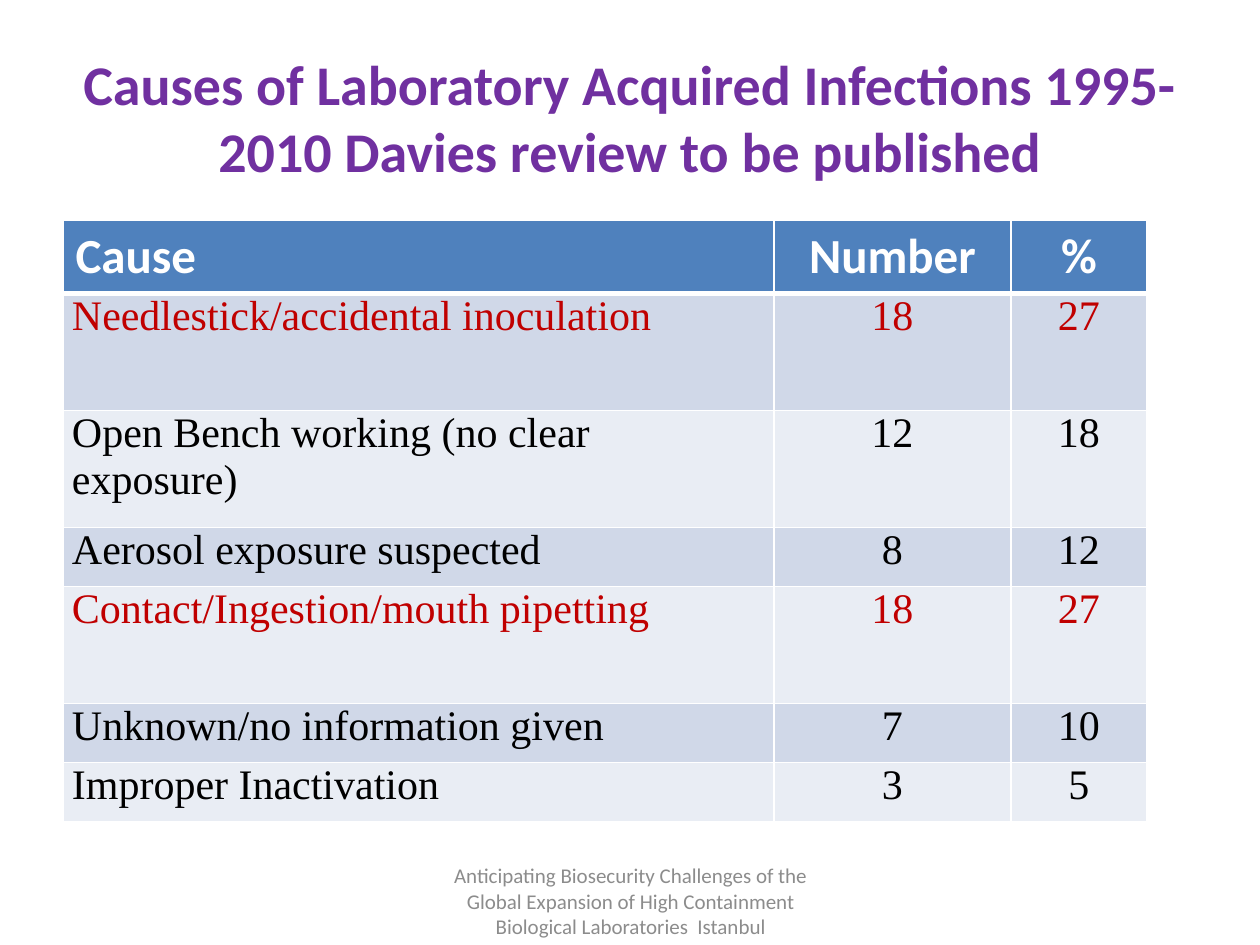
import dataclasses

import pptx
import pptx.dml.color
import pptx.enum.text
import pptx.oxml
import pptx.oxml.ns
import pptx.util

Cm = pptx.util.Cm
Pt = pptx.util.Pt
Align = pptx.enum.text.PP_ALIGN
Anchor = pptx.enum.text.MSO_ANCHOR


@dataclasses.dataclass(frozen=True)
class Theme:
    sans: str = "Calibri"
    serif: str = "Times New Roman"
    title: str = "7030A0"
    head: str = "4F81BD"
    bands: tuple = ("D0D8E8", "E9EDF4")
    white: str = "FFFFFF"
    black: str = "000000"
    alert: str = "C00000"
    grey: str = "8C8C8C"
    title_size: int = 32
    head_size: int = 28
    body_size: int = 24
    foot_size: int = 12


THEME = Theme()
TITLE = "Causes of Laboratory Acquired Infections 1995-2010 Davies review to be published"
FOOTER = ("Anticipating Biosecurity Challenges of the Global Expansion of "
          "High Containment Biological Laboratories  Istanbul")
HEADS = ("Cause", "Number", "%")
WIDTHS = (14.33, 4.78, 2.74)
LOW, TALL = 1.19, 2.36

# Cause, number, percent, row height, text colour
CAUSES = (
    ("Needlestick/accidental inoculation", "18", "27", TALL, THEME.alert),
    ("Open Bench working (no clear exposure)", "12", "18", TALL, THEME.black),
    ("Aerosol exposure suspected", "8", "12", LOW, THEME.black),
    ("Contact/Ingestion/mouth pipetting", "18", "27", TALL, THEME.alert),
    ("Unknown/no information given", "7", "10", LOW, THEME.black),
    ("Improper Inactivation", "3", "5", LOW, THEME.black),
)


def rgb(code):
    return pptx.dml.color.RGBColor.from_string(code)


def write(frame, text, size, color, font=THEME.sans, bold=False, align=Align.CENTER):
    line = frame.paragraphs[0]
    line.alignment = align
    run = line.add_run()
    run.text = text
    run.font.name = font
    run.font.size = Pt(size)
    run.font.bold = bold
    run.font.color.rgb = rgb(color)


def place(shape, left, top, width, height):
    shape.left, shape.top = Cm(left), Cm(top)
    shape.width, shape.height = Cm(width), Cm(height)


def border(cell, sides):
    props = cell._tc.get_or_add_tcPr()
    # Border lines stand before the fill
    for spot, (side, width) in enumerate(sides.items()):
        props.insert(spot, pptx.oxml.parse_xml(
            f'<a:ln{side} {pptx.oxml.ns.nsdecls("a")} w="{Pt(width)}">'
            f'<a:solidFill><a:srgbClr val="{THEME.white}"/></a:solidFill>'
            f'</a:ln{side}>'))


def paint(cell, color):
    cell.fill.solid()
    cell.fill.fore_color.rgb = rgb(color)


def side_align(col):
    return Align.LEFT if col == 0 else Align.CENTER


def add_title(slide):
    title = slide.shapes.title
    place(title, 1.27, 0.76, 22.86, 3.18)
    title.text_frame.vertical_anchor = Anchor.MIDDLE
    write(title.text_frame, TITLE, THEME.title_size, THEME.title, bold=True)


def add_causes(slide):
    highs = [LOW] + [cause[3] for cause in CAUSES]
    table = slide.shapes.add_table(
        len(highs), len(WIDTHS), Cm(1.27), Cm(4.45),
        Cm(sum(WIDTHS)), Cm(sum(highs))).table
    for column, width in zip(table.columns, WIDTHS):
        column.width = Cm(width)
    for row, high in zip(table.rows, highs):
        row.height = Cm(high)

    # Header row
    for col, text in enumerate(HEADS):
        cell = table.cell(0, col)
        write(cell.text_frame, text, THEME.head_size, THEME.white,
              bold=True, align=side_align(col))
        paint(cell, THEME.head)
        border(cell, {"L": 1, "R": 1, "T": 1, "B": 3})

    # Body rows; each top line belongs to the row above
    for row, (*texts, _, color) in enumerate(CAUSES, 1):
        for col, text in enumerate(texts):
            cell = table.cell(row, col)
            cell.margin_left = cell.margin_right = Cm(0.18)
            cell.margin_top = cell.margin_bottom = 0
            write(cell.text_frame, text, THEME.body_size, color,
                  THEME.serif, align=side_align(col))
            paint(cell, THEME.bands[(row - 1) % 2])
            border(cell, {"L": 1, "R": 1, "B": 1})


def add_footer(slide):
    box = slide.shapes.add_textbox(Cm(8.69), Cm(17.65), Cm(8.05), Cm(1.02))
    box.text_frame.word_wrap = True
    box.text_frame.vertical_anchor = Anchor.MIDDLE
    write(box.text_frame, FOOTER, THEME.foot_size, THEME.grey)


def main():
    deck = pptx.Presentation()
    deck.slide_width, deck.slide_height = Cm(25.4), Cm(19.05)
    slide = deck.slides.add_slide(deck.slide_layouts[5])
    add_title(slide)
    add_causes(slide)
    add_footer(slide)
    deck.save("out.pptx")


if __name__ == "__main__":
    main()
